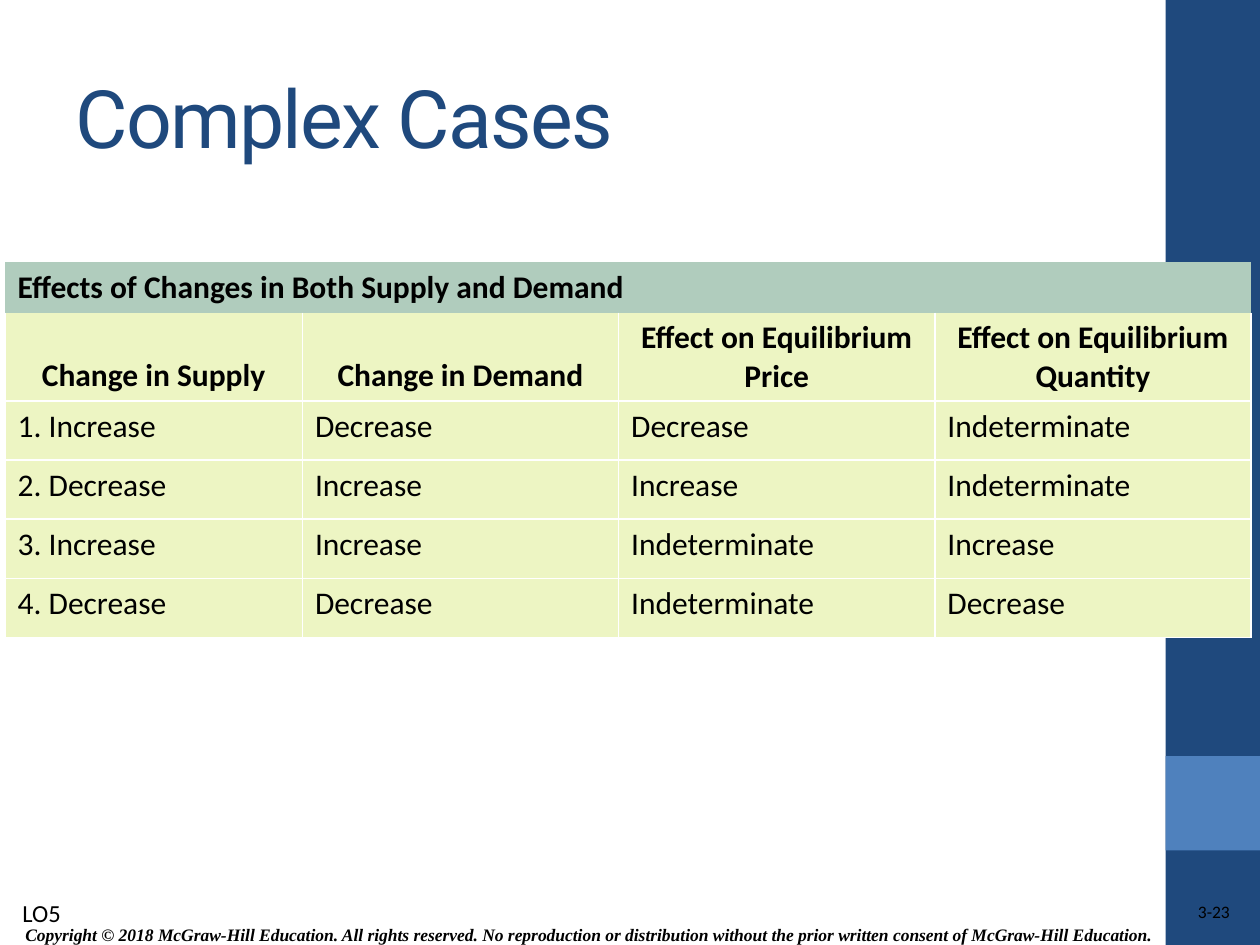
from pptx import Presentation
from pptx.dml.color import RGBColor
from pptx.enum.shapes import MSO_SHAPE as Shape
from pptx.enum.text import MSO_ANCHOR as Anchor, PP_ALIGN as Align
from pptx.oxml.ns import qn
from pptx.util import Inches, Pt
from lxml.etree import SubElement

NAVY, BLUE, BLACK, WHITE = "1F497D", "4F81BD", "000000", "FFFFFF"
GREEN, LIME = "B0CCBD", "EDF5C3"

HEADING = "Effects of Changes in Both Supply and Demand"
COLUMNS = ["Change in Supply", "Change in Demand",
           "Effect on Equilibrium Price", "Effect on Equilibrium Quantity"]
CASES = [
    ["1. Increase", "Decrease", "Decrease", "Indeterminate"],
    ["2. Decrease", "Increase", "Increase", "Indeterminate"],
    ["3. Increase", "Increase", "Indeterminate", "Increase"],
    ["4. Decrease", "Decrease", "Indeterminate", "Decrease"],
]
COPYRIGHT = ("Copyright © 2018 McGraw-Hill Education. All rights reserved. No reproduction "
             "or distribution without the prior written consent of McGraw-Hill Education.")


def color(value):
    return RGBColor.from_string(value)


def lengths(values):
    return [Inches(value) for value in values]


class SlideBuilder:
    """Holds the style and the current slide, and adds each kind of element."""

    def __init__(self, page):
        self.page = page
        self.style = {"name": "Calibri", "size": Pt(18), "bold": False, "italic": False}

    def fill_frame(self, frame, text, align=Align.LEFT, ink=BLACK, **changes):
        para = frame.paragraphs[0]
        para.alignment = align
        span = para.add_run()
        span.text = text
        for name, value in {**self.style, **changes}.items():
            setattr(span.font, name, value)
        span.font.color.rgb = color(ink)
        return para

    def title(self, text, place):
        title = self.page.shapes.title
        for name, value in zip(("left", "top", "width", "height"), lengths(place)):
            setattr(title, name, value)
        title.text_frame.vertical_anchor = Anchor.MIDDLE
        para = self.fill_frame(title.text_frame, text, ink=NAVY, name="Roboto", size=Pt(46))
        para.runs[0].font._element.set("spc", "-100")

    def block(self, place, fill):
        block = self.page.shapes.add_shape(Shape.RECTANGLE, *lengths(place))
        block.shadow.inherit = False
        block.fill.solid()
        block.fill.fore_color.rgb = color(fill)
        block.line.fill.background()

    def text(self, text, place, frame_format=None, **changes):
        frame = self.page.shapes.add_textbox(*lengths(place)).text_frame
        for name, value in {"word_wrap": True, **(frame_format or {})}.items():
            setattr(frame, name, value)
        return self.fill_frame(frame, text, **changes)

    def cell(self, cell, text, fill, edges, anchor=Anchor.TOP, **changes):
        for side in "LRTB":
            line = SubElement(cell._tc.get_or_add_tcPr(), qn(f"a:ln{side}"), w=str(Pt(1)))
            if side in edges:
                SubElement(SubElement(line, qn("a:solidFill")), qn("a:srgbClr"), val=WHITE)
            else:
                SubElement(line, qn("a:noFill"))
        cell.fill.solid()
        cell.fill.fore_color.rgb = color(fill)
        cell.vertical_anchor = anchor
        self.fill_frame(cell.text_frame, text, **changes)

    def table(self, place, widths, heights):
        table = self.page.shapes.add_table(len(heights), len(widths), *lengths(place)).table
        for column, width in zip(table.columns, widths):
            column.width = Inches(width)
        for row, height in zip(table.rows, heights):
            row.height = Inches(height)
        table.first_row = table.horz_banding = False

        table.cell(0, 0).merge(table.cell(0, len(widths) - 1))
        self.cell(table.cell(0, 0), HEADING, GREEN, "", Anchor.BOTTOM, bold=True)
        for index, label in enumerate(COLUMNS):
            self.cell(table.cell(1, index), label, LIME, "LRB", Anchor.BOTTOM,
                      align=Align.CENTER, bold=True)
        for number, case in enumerate(CASES, start=2):
            for index, label in enumerate(case):
                self.cell(table.cell(number, index), label, LIME, "LRTB")


def main():
    deck = Presentation()
    deck.slide_width, deck.slide_height = Inches(10), Inches(7.5)
    builder = SlideBuilder(deck.slides.add_slide(deck.slide_layouts[5]))

    builder.block((9.25, 0, 0.75, 7.5), NAVY)
    builder.block((9.25, 6, 0.75, 0.75), BLUE)
    builder.text(COPYRIGHT, (0.06, 7.28, 9.22, 0.28), {"vertical_anchor": Anchor.MIDDLE},
                 align=Align.CENTER, name="Times New Roman", size=Pt(10),
                 bold=True, italic=True)
    no_margins = dict.fromkeys(
        ("margin_left", "margin_top", "margin_right", "margin_bottom"), 0)
    number = builder.text("3-23", (7.81, 7.15, 1.95, 0.2), no_margins,
                          align=Align.RIGHT, size=Pt(10))
    number.line_spacing = 1.02
    builder.title("Complex Cases", (0.5, 0.3, 8.33, 1.25))
    builder.text("LO5", (0.08, 7.08, 0.53, 0.34), size=Pt(14))
    builder.table((0.04, 2.08, 9.89, 2.97), [2.36] + [2.51] * 3, [0.39, 0.69] + [0.47] * 4)

    deck.save("out.pptx")


if __name__ == "__main__":
    main()
